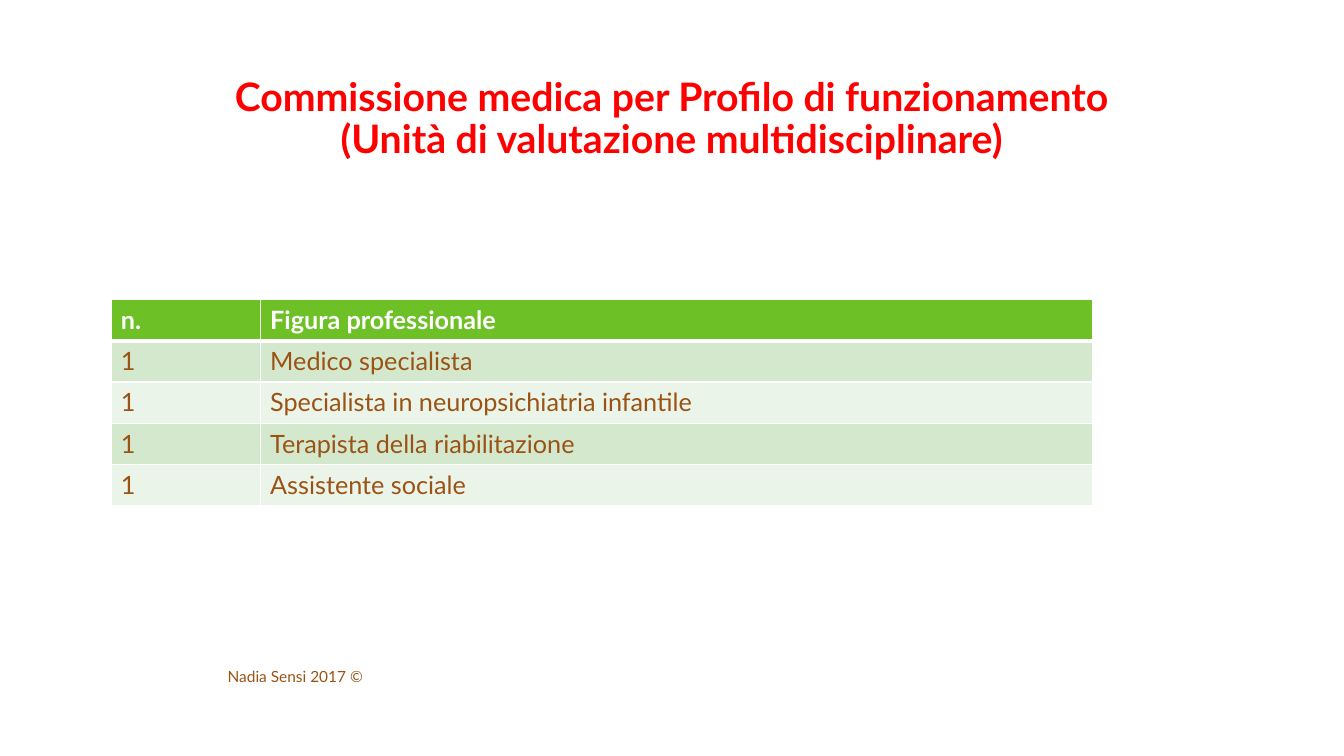
from lxml.etree import SubElement
from pptx import Presentation
from pptx.dml.color import RGBColor
from pptx.enum.text import MSO_ANCHOR, PP_ALIGN
from pptx.oxml.ns import qn
from pptx.util import Inches, Pt

RED = RGBColor(0xFF, 0x00, 0x00)
WHITE = RGBColor(0xFF, 0xFF, 0xFF)
BROWN = RGBColor(0x9A, 0x53, 0x15)
GREEN = RGBColor(0x6D, 0xC0, 0x25)
BANDS = (RGBColor(0xD4, 0xE8, 0xCD), RGBColor(0xEB, 0xF4, 0xE8))
FONT = "Lato"
COLUMN_WIDTHS = (1.48, 8.26)
ROW_HEIGHT = 0.41
MEMBERS = (
    ("n.", "Figura professionale"),
    ("1", "Medico specialista"),
    ("1", "Specialista in neuropsichiatria infantile"),
    ("1", "Terapista della riabilitazione"),
    ("1", "Assistente sociale"),
)


def set_font(paragraph, size, color, bold=False):
    font = paragraph.font
    font.name = FONT
    font.size = Pt(size)
    font.bold = bold
    font.color.rgb = color


def add_heading(slide, text):
    heading = slide.shapes.title
    heading.left, heading.top = Inches(1.16), Inches(0.33)
    heading.width, heading.height = Inches(11), Inches(1.33)
    frame = heading.text_frame
    frame.text = text
    frame.word_wrap = True
    frame.vertical_anchor = MSO_ANCHOR.BOTTOM
    paragraph = frame.paragraphs[0]
    paragraph.alignment = PP_ALIGN.CENTER
    paragraph.line_spacing = 0.9
    set_font(paragraph, 28, RED, True)


def set_borders(cell, bottom_width):
    properties = cell._tc.get_or_add_tcPr()
    widths = {"a:lnL": 1, "a:lnR": 1, "a:lnT": 1, "a:lnB": bottom_width}
    for side, width in widths.items():
        border = SubElement(properties, qn(side), w=str(Pt(width)))
        fill = SubElement(border, qn("a:solidFill"))
        SubElement(fill, qn("a:srgbClr"), val=str(WHITE))


def fill_cell(cell, text, row, column):
    is_header = row == 0
    set_borders(cell, 3 if is_header else 1)
    cell.fill.solid()
    cell.fill.fore_color.rgb = GREEN if is_header else BANDS[(row - 1) % 2]
    cell.text = text
    paragraph = cell.text_frame.paragraphs[0]
    if column == 1 and not is_header:
        paragraph.alignment = PP_ALIGN.JUSTIFY
    set_font(paragraph, 18, WHITE if is_header else BROWN, is_header)


def add_members(slide):
    members = slide.shapes.add_table(
        len(MEMBERS), len(COLUMN_WIDTHS), Inches(1.1), Inches(2.97),
        Inches(sum(COLUMN_WIDTHS)), Inches(ROW_HEIGHT * len(MEMBERS))).table
    for column, width in zip(members.columns, COLUMN_WIDTHS):
        column.width = Inches(width)
    for row, texts in enumerate(MEMBERS):
        members.rows[row].height = Inches(ROW_HEIGHT)
        for column, text in enumerate(texts):
            fill_cell(members.cell(row, column), text, row, column)


def add_credit(slide, text):
    credit = slide.shapes.add_textbox(
        Inches(2.16), Inches(6.58), Inches(6.5), Inches(0.25))
    frame = credit.text_frame
    frame.word_wrap = True
    frame.vertical_anchor = MSO_ANCHOR.MIDDLE
    frame.text = text
    set_font(frame.paragraphs[0], 11, BROWN)


def main():
    deck = Presentation()
    deck.slide_width, deck.slide_height = Inches(13.33), Inches(7.5)
    slide = deck.slides.add_slide(deck.slide_layouts[5])
    add_heading(slide, "Commissione medica per Profilo di funzionamento\v"
                       "(Unità di valutazione multidisciplinare)")
    add_members(slide)
    add_credit(slide, "Nadia Sensi 2017 ©")
    deck.save("out.pptx")


if __name__ == "__main__":
    main()
